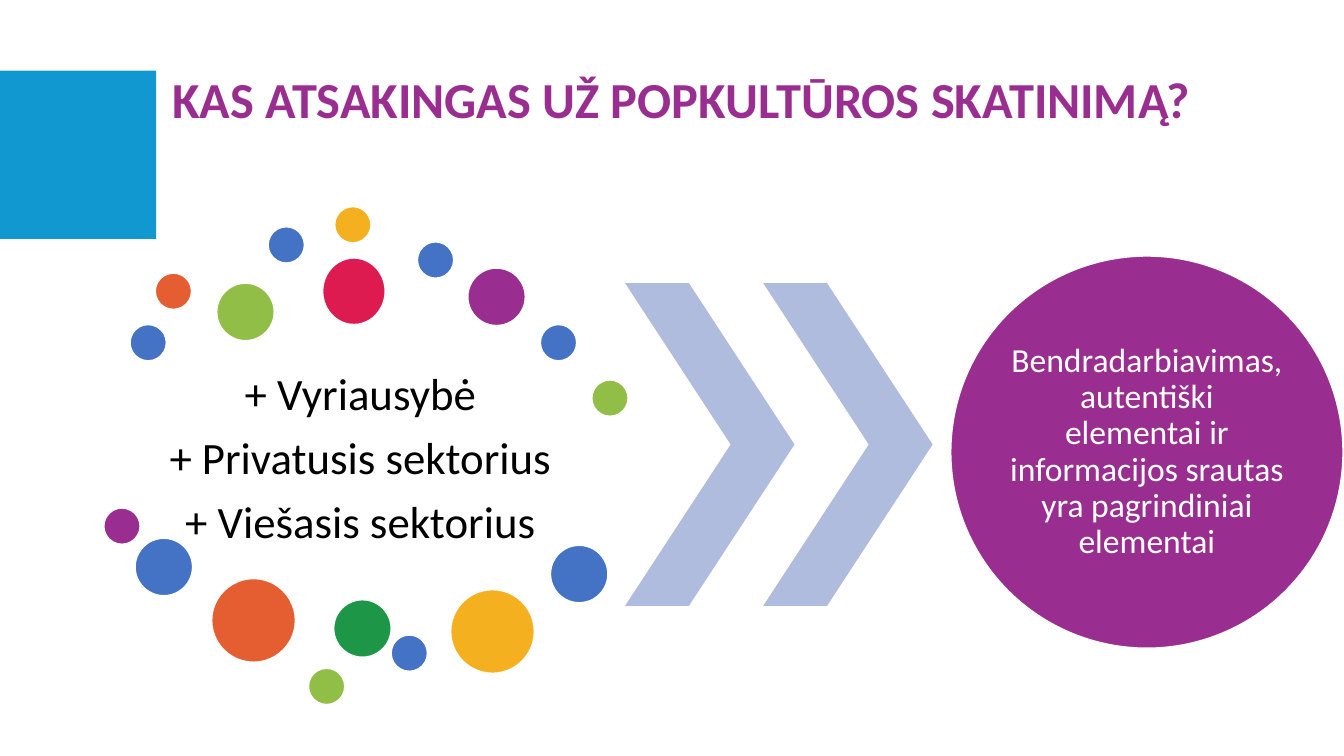
from pptx import Presentation
from pptx.dml.color import RGBColor
from pptx.enum import shapes, text
from pptx.oxml import ns
from pptx.util import Inches, Pt
from lxml import etree

COLORS = {
    "white": "FFFFFF", "black": "000000", "sky": "1198D1", "blue": "4472C4",
    "orange": "E45E32", "lime": "91BE46", "yellow": "F5B020", "purple": "9A2E90",
    "red": "DD1B50", "green": "1D9647", "lavender": "B0BCDE",
}
SMALL, MEDIUM, LARGE = 0.36, 0.57, 0.83


def add_figure(page, kind, place, color, outlined=True):
    figure = page.shapes.add_shape(kind, *map(Inches, place))
    figure.shadow.inherit = False
    figure.fill.solid()
    figure.fill.fore_color.rgb = RGBColor.from_string(COLORS[color])
    if outlined:
        figure.line.color.rgb = RGBColor.from_string(COLORS["white"])
        figure.line.width = Pt(1)
    else:
        figure.line.fill.background()
    return figure


def write_lines(box, place, lines, color, frame_format, para_format, font_format):
    box.left, box.top, box.width, box.height = map(Inches, place)
    frame = box.text_frame
    frame.text = "\n".join(lines)
    for name, value in frame_format.items():
        setattr(frame, name, value)
    for para in frame.paragraphs:
        props = para._p.get_or_add_pPr()
        props.set("marL", "0")
        props.set("indent", "0")
        etree.SubElement(props, ns.qn("a:buNone"))
        for name, value in para_format.items():
            setattr(para, name, value)
        for span in para.runs:
            span.font.color.rgb = RGBColor.from_string(COLORS[color])
            for name, value in font_format.items():
                setattr(span.font, name, value)


deck = Presentation()
deck.slide_width, deck.slide_height = Inches(13.33), Inches(7.5)
page = deck.slides.add_slide(deck.slide_layouts[1])
title, sectors = page.placeholders

frame_base = {"word_wrap": True, "auto_size": text.MSO_AUTO_SIZE.NONE}
centred_frame = frame_base | {"vertical_anchor": text.MSO_ANCHOR.MIDDLE}
para_base = {"line_spacing": 0.9, "space_before": Pt(0)}
centred_para = para_base | {"alignment": text.PP_ALIGN.CENTER}
margins = ("margin_left", "margin_top", "margin_right", "margin_bottom")

add_figure(page, shapes.MSO_SHAPE.RECTANGLE, (-0.01, 0.7, 1.56, 1.67), "sky", False)

write_lines(
    title, (1.61, 0.69, 10.55, 0.76),
    ["KAS ATSAKINGAS UŽ POPKULTŪROS SKATINIMĄ?"], "purple",
    frame_base | {"vertical_anchor": text.MSO_ANCHOR.TOP},
    para_base | {"alignment": text.PP_ALIGN.LEFT},
    {"name": "Calibri", "size": Pt(36), "bold": True},
)
write_lines(
    sectors, (0.95, 3.43, 5.25, 2.27),
    ["+ Vyriausybė", "+ Privatusis sektorius", "+ Viešasis sektorius"], "black",
    centred_frame | dict.fromkeys(margins, Inches(0.04)),
    centred_para | {"space_after": Pt(11.2)},
    {"name": "Calibri", "size": Pt(32)},
)

dots = [
    (1.29, 3.22, SMALL, "blue"), (1.54, 2.71, SMALL, "orange"),
    (2.15, 2.81, MEDIUM, "lime"), (2.66, 2.25, SMALL, "blue"),
    (3.32, 2.05, SMALL, "yellow"), (4.14, 2.4, SMALL, "blue"),
    (4.64, 2.66, MEDIUM, "purple"), (5.36, 3.22, SMALL, "blue"),
    (5.87, 3.77, SMALL, "lime"), (1.03, 5.04, SMALL, "purple"),
    (1.34, 5.34, MEDIUM, "blue"), (2.1, 5.74, LARGE, "orange"),
    (3.06, 6.63, SMALL, "lime"), (3.31, 5.95, MEDIUM, "green"),
    (3.88, 6.3, SMALL, "blue"), (4.47, 5.85, LARGE, "yellow"),
    (5.46, 5.41, MEDIUM, "blue"),
]
for left, top, size, color in dots:
    add_figure(page, shapes.MSO_SHAPE.OVAL, (left, top, size, size), color)
add_figure(page, shapes.MSO_SHAPE.OVAL, (3.2, 2.56, 0.62, 0.66), "red")

for left in (6.2, 7.57):
    chevron = add_figure(page, shapes.MSO_SHAPE.CHEVRON, (left, 2.81, 1.68, 3.2), "lavender", False)
    chevron.adjustments[0] = 0.623

add_figure(page, shapes.MSO_SHAPE.OVAL, (9.43, 2.54, 3.89, 3.89), "purple")
result_place = (10, 3.11, 2.75, 2.75)
result = page.shapes.add_textbox(*map(Inches, result_place))
write_lines(
    result, result_place,
    ["Bendradarbiavimas, autentiški elementai ir informacijos srautas yra pagrindiniai elementai"],
    "white", centred_frame | dict.fromkeys(margins, 0), centred_para,
    {"name": "Calibri", "size": Pt(24)},
)

deck.save("out.pptx")
